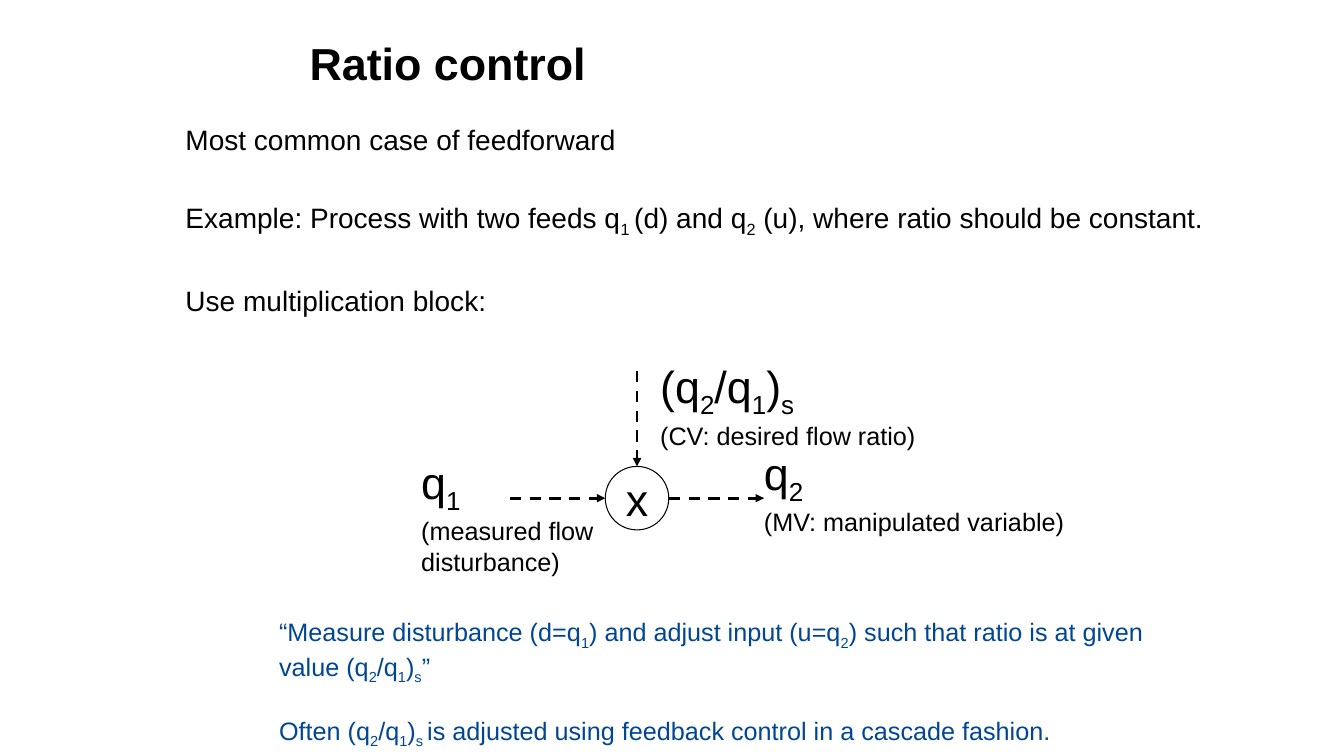
from dataclasses import dataclass

from lxml.etree import SubElement
from pptx import Presentation
from pptx.dml.color import RGBColor
from pptx.enum.dml import MSO_LINE
from pptx.enum.shapes import MSO_CONNECTOR, MSO_SHAPE
from pptx.enum.text import MSO_ANCHOR, MSO_AUTO_SIZE, PP_ALIGN
from pptx.oxml.ns import qn
from pptx.util import Inches, Pt

TITLE = ["Ratio control"]
STATEMENTS = [
    "Most common case of feedforward",
    "Example: Process with two feeds q{1 }(d) and q{2} (u), where ratio should be constant.",
    "Use multiplication block:",
]
OPERATOR = ["x"]
SIGNALS = [
    (["(q{2}/q{1}){s}", "(CV: desired flow ratio)"], (48.38, 46.8, 20.7, 12.53), False),
    (["q{1}", "(measured flow", "disturbance)"], (30.6, 59.47, 15.98, 16.67), True),
    (["q{2}", "(MV: manipulated variable)"], (56.1, 58.27, 24.08, 17.33), False),
]
CONCLUSIONS = [
    "“Measure disturbance (d=q{1}) and adjust input (u=q{2}) such that ratio is at given value (q{2}/q{1}){s}”",
    "Often (q{2}/q{1}){s }is adjusted using feedback control in a cascade fashion.",
]
TITLE_AREA = (22.28, 4, 60.75, 8.53)
STATEMENT_AREA = (13.05, 15.47, 81, 78.13)
CONCLUSION_AREA = (20.03, 80.93, 67.5, 17.47)
BLOCK_CENTER = (47.4, 65.9)
BLOCK_DIAMETER = 8.4
ARROW_PER_DIAMETER = 1.5


@dataclass(frozen=True)
class Theme:
    font: str = "Arial"
    ink: RGBColor = RGBColor(0, 0, 0)
    accent: RGBColor = RGBColor(0x01, 0x46, 0x93)
    large: Pt = Pt(32)
    body: Pt = Pt(20)
    small: Pt = Pt(18)
    outline: Pt = Pt(0.75)
    arrow: Pt = Pt(2)


theme = Theme()
deck = Presentation()
deck.slide_width, deck.slide_height = Inches(13.33), Inches(7.5)


def across(share):
    return round(deck.slide_width * share / 100)


def down(share):
    return round(deck.slide_height * share / 100)


def apply(target, values):
    for name, value in values.items():
        setattr(target, name, value)


def place(shape, area):
    left, top, width, height = area
    apply(shape, {"left": across(left), "top": down(top),
                  "width": across(width), "height": down(height)})


def write(shape, lines, sizes, color=theme.ink, bold=False, gap=0,
          align=PP_ALIGN.LEFT, anchor=MSO_ANCHOR.TOP, wrap=True):
    frame = shape.text_frame
    apply(frame, {"auto_size": MSO_AUTO_SIZE.NONE, "word_wrap": wrap, "vertical_anchor": anchor})
    for index, line in enumerate(lines):
        paragraph = frame.paragraphs[0] if index == 0 else frame.add_paragraph()
        properties = paragraph._p.get_or_add_pPr()
        apply(paragraph, {"alignment": align, "space_before": Pt(gap if index else 0)})
        properties.set("marL", "0")
        properties.set("indent", "0")
        SubElement(properties, qn("a:buNone"))
        for part, piece in enumerate(line.replace("}", "{").split("{")):
            if not piece:
                continue
            run = paragraph.add_run()
            run.text = piece
            apply(run.font, {"name": theme.font, "bold": bold,
                             "size": sizes[min(index, len(sizes) - 1)]})
            run.font.color.rgb = color
            if part % 2:
                run._r.get_or_add_rPr().set("baseline", "-25000")


def draw_arrow(diagram, start, end):
    arrow = diagram.shapes.add_connector(MSO_CONNECTOR.STRAIGHT, *start, *end)
    apply(arrow.line, {"width": theme.arrow, "dash_style": MSO_LINE.DASH})
    arrow.line.color.rgb = theme.ink
    SubElement(arrow.line._get_or_add_ln(), qn("a:tailEnd"), type="triangle")
    SubElement(arrow._element.spPr, qn("a:effectLst"))


def draw_diagram(slide):
    diagram = slide.shapes.add_group_shape()
    x, y = across(BLOCK_CENTER[0]), down(BLOCK_CENTER[1])
    diameter = down(BLOCK_DIAMETER)
    radius = diameter // 2
    reach = radius + round(diameter * ARROW_PER_DIAMETER)

    block = diagram.shapes.add_shape(MSO_SHAPE.OVAL, x - radius, y - radius, diameter, diameter)
    block.shadow.inherit = False
    block.fill.background()
    block.line.color.rgb = theme.ink
    block.line.width = theme.outline
    write(block, OPERATOR, [theme.large], align=PP_ALIGN.CENTER,
          anchor=MSO_ANCHOR.MIDDLE, wrap=False)

    for start, end in [((x - reach, y), (x - radius, y)),
                       ((x + radius, y), (x + reach, y)),
                       ((x, y - reach), (x, y - radius))]:
        draw_arrow(diagram, start, end)
    for lines, area, wrap in SIGNALS:
        label = diagram.shapes.add_textbox(0, 0, 0, 0)
        place(label, area)
        write(label, lines, [theme.large, theme.small], wrap=wrap)


def main():
    slide = deck.slides.add_slide(deck.slide_layouts[1])
    title, statements = slide.placeholders
    place(title, TITLE_AREA)
    write(title, TITLE, [theme.large], bold=True, anchor=MSO_ANCHOR.MIDDLE)
    place(statements, STATEMENT_AREA)
    write(statements, STATEMENTS, [theme.body], gap=32)
    draw_diagram(slide)
    conclusions = slide.shapes.add_textbox(0, 0, 0, 0)
    place(conclusions, CONCLUSION_AREA)
    write(conclusions, CONCLUSIONS, [theme.small], color=theme.accent, gap=21)
    deck.save("out.pptx")


if __name__ == "__main__":
    main()
